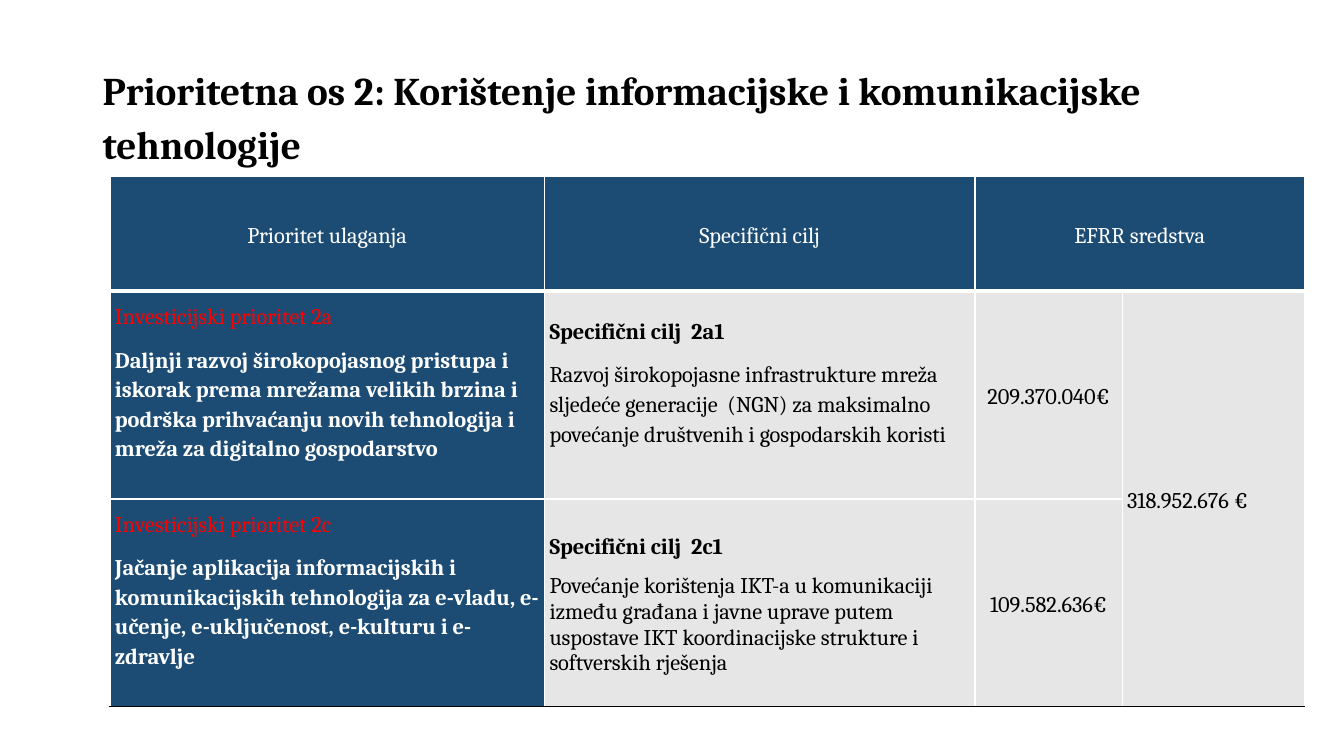
"""Build the slide on priority axis 2 and its table of investment priorities."""
from lxml import etree
from pptx import Presentation
from pptx.dml.color import RGBColor
from pptx.enum.text import MSO_ANCHOR, PP_ALIGN
from pptx.oxml.ns import qn
from pptx.util import Inches, Pt

MIDDLE = MSO_ANCHOR.MIDDLE
LEFT, CENTER = PP_ALIGN.LEFT, PP_ALIGN.CENTER

THEME = {
    "font": "Cambria", "title_size": 28, "table_size": 16,
    "navy": "1C4C74", "grey": "E7E6E6", "white": "FFFFFF",
    "black": "000000", "red": "FF0000",
    "line_spacing": 1.15, "space_after": 10,
    "thin": 1, "thick": 3,
}

TITLE = "Prioritetna os 2: Korištenje informacijske i komunikacijske tehnologije"
HEADERS = ["Prioritet ulaganja", "Specifični cilj", "EFRR sredstva"]
PRIORITIES = [
    {
        "priority": "Investicijski prioritet 2a",
        "aim": "Daljnji razvoj širokopojasnog pristupa i iskorak prema mrežama velikih "
               "brzina i podrška prihvaćanju novih tehnologija i mreža za digitalno gospodarstvo",
        "goal": "Specifični cilj  2a1",
        "detail": "Razvoj širokopojasne infrastrukture mreža sljedeće generacije  (NGN) za "
                  "maksimalno povećanje društvenih i gospodarskih koristi",
        "detail_spacing": (1.15, 10),
        "goal_bottom": 0.28,
        "funds": "209.370.040€",
    },
    {
        "priority": "Investicijski prioritet 2c",
        "aim": "Jačanje aplikacija informacijskih i komunikacijskih tehnologija za e-vladu, "
               "e-učenje, e-uključenost, e-kulturu i e-zdravlje",
        "goal": "Specifični cilj  2c1",
        "detail": "Povećanje korištenja IKT-a u komunikaciji između građana i javne uprave "
                  "putem uspostave IKT koordinacijske strukture i softverskih rješenja",
        "detail_spacing": (1.0, 0),
        "goal_bottom": 0,
        "funds": "109.582.636€",
    },
]
TOTAL_FUNDS = "318.952.676 €"

TITLE_BOX = (0.92, 0.4, 11.5, 1.45)
TABLE_ORIGIN = (1.09, 1.75)
COLUMN_WIDTHS = [4.31, 4.27, 1.46, 1.81]
ROW_HEIGHTS = [1.14, 2.06, 2.06]
AIM_BOTTOM = 0.28


def write_paragraph(frame, index, text, color, size, bold=False, align=LEFT,
                    spacing=(THEME["line_spacing"], 0)):
    paragraph = frame.paragraphs[0] if index == 0 else frame.add_paragraph()
    paragraph.alignment = align
    paragraph.line_spacing, paragraph.space_after = spacing[0], Pt(spacing[1])
    run = paragraph.add_run()
    run.text = text
    run.font.name = THEME["font"]
    run.font.size = Pt(size)
    run.font.bold = bold
    run.font.color.rgb = RGBColor.from_string(THEME[color])


def fill_cell(cell, fill, paragraphs, bottom=0):
    cell.fill.solid()
    cell.fill.fore_color.rgb = RGBColor.from_string(THEME[fill])
    cell.vertical_anchor = MIDDLE
    cell.margin_left = cell.margin_right = Inches(0.05)
    cell.margin_top, cell.margin_bottom = Inches(0.01), Inches(bottom)
    for index, options in enumerate(paragraphs):
        write_paragraph(cell.text_frame, index, size=THEME["table_size"], **options)


def set_borders(cell, top, bottom, bottom_color):
    properties = cell._tc.get_or_add_tcPr()
    borders = [("a:lnL", THEME["thin"], "white"), ("a:lnR", THEME["thin"], "white"),
               ("a:lnT", top, "white"), ("a:lnB", bottom, bottom_color)]
    for position, (tag, width, color) in enumerate(borders):
        line = etree.Element(qn(tag), w=str(Pt(width)))
        solid = etree.SubElement(line, qn("a:solidFill"))
        etree.SubElement(solid, qn("a:srgbClr"), val=THEME[color])
        properties.insert(position, line)


def add_title(slide):
    frame = slide.shapes.add_textbox(*map(Inches, TITLE_BOX)).text_frame
    frame.word_wrap = True
    frame.vertical_anchor = MIDDLE
    write_paragraph(frame, 0, TITLE, "black", THEME["title_size"], bold=True,
                    spacing=(THEME["line_spacing"], THEME["space_after"]))


def add_priorities(slide):
    table = slide.shapes.add_table(
        len(ROW_HEIGHTS), len(COLUMN_WIDTHS), *map(Inches, TABLE_ORIGIN),
        Inches(sum(COLUMN_WIDTHS)), Inches(sum(ROW_HEIGHTS))).table
    table.first_row = table.horz_banding = False
    for column, width in zip(table.columns, COLUMN_WIDTHS):
        column.width = Inches(width)
    for row, height in zip(table.rows, ROW_HEIGHTS):
        row.height = Inches(height)
    table.cell(0, 2).merge(table.cell(0, 3))
    table.cell(1, 3).merge(table.cell(2, 3))

    for column, header in enumerate(HEADERS):
        fill_cell(table.cell(0, column), "navy",
                  [dict(text=header, color="white", align=CENTER)])
    spaced = (THEME["line_spacing"], THEME["space_after"])
    for row, item in enumerate(PRIORITIES, start=1):
        fill_cell(table.cell(row, 0), "navy", [
            dict(text=item["priority"], color="red", spacing=spaced),
            dict(text=item["aim"], color="white", bold=True, spacing=spaced),
        ], AIM_BOTTOM)
        fill_cell(table.cell(row, 1), "grey", [
            dict(text=item["goal"], color="black", bold=True, spacing=spaced),
            dict(text=item["detail"], color="black", spacing=item["detail_spacing"]),
        ], item["goal_bottom"])
        fill_cell(table.cell(row, 2), "grey",
                  [dict(text=item["funds"], color="black", align=CENTER)])
    fill_cell(table.cell(1, 3), "grey", [dict(text=TOTAL_FUNDS, color="black")])

    last = len(ROW_HEIGHTS) - 1
    for row in range(len(ROW_HEIGHTS)):
        for column in range(len(COLUMN_WIDTHS)):
            cell = table.cell(row, column)
            reaches_end = row == last or (cell.is_merge_origin and row + cell.span_height > last)
            set_borders(cell, THEME["thick"] if row == 1 else THEME["thin"],
                        THEME["thick"] if row == 0 else THEME["thin"],
                        "black" if reaches_end else "white")


def main():
    deck = Presentation()
    deck.slide_width, deck.slide_height = Inches(13.33), Inches(7.5)
    slide = deck.slides.add_slide(deck.slide_layouts[6])
    add_title(slide)
    add_priorities(slide)
    deck.save("out.pptx")


if __name__ == "__main__":
    main()
